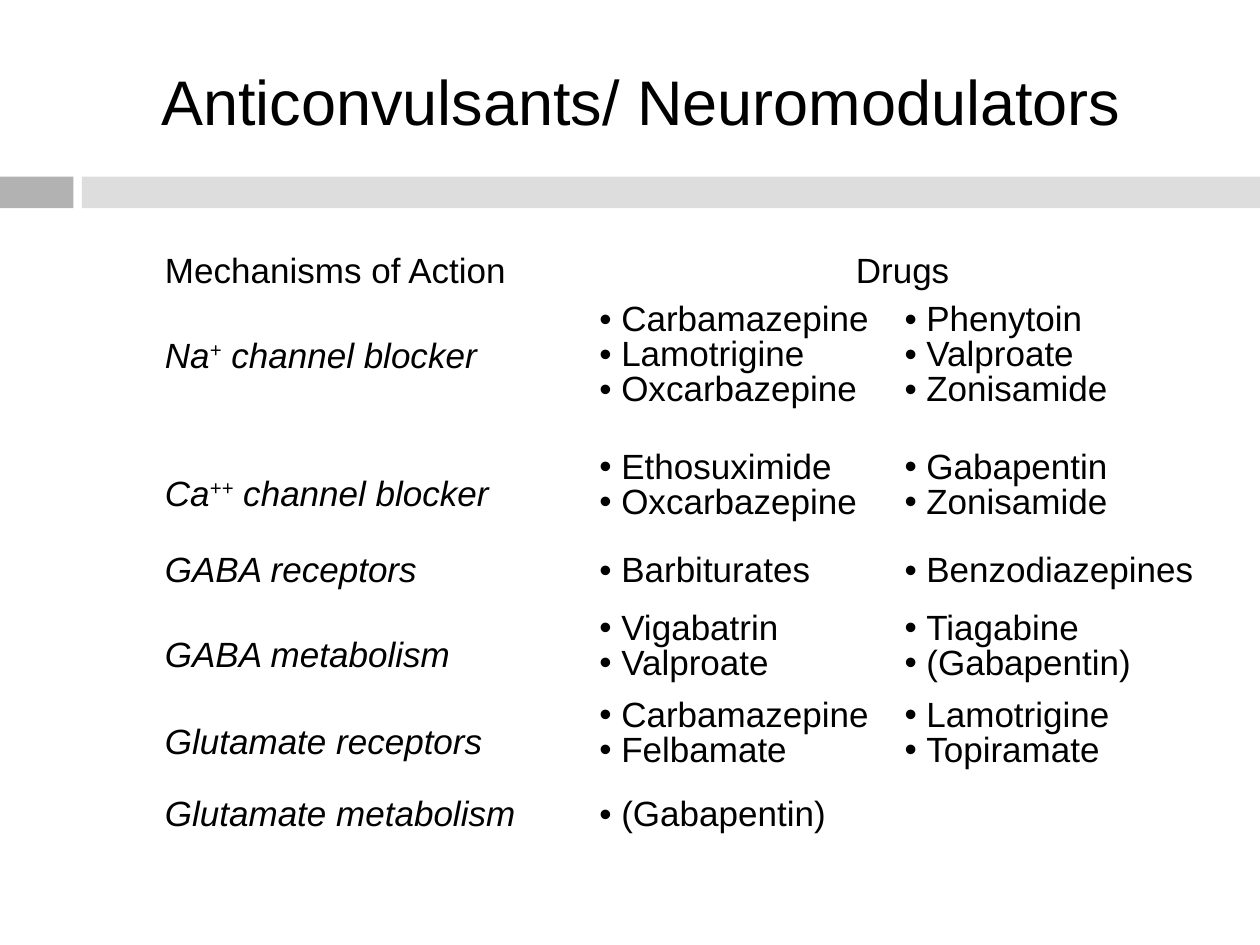
from lxml.etree import SubElement
from pptx import Presentation
from pptx.dml.color import RGBColor
from pptx.enum.shapes import MSO_SHAPE
from pptx.enum.text import MSO_ANCHOR, PP_ALIGN
from pptx.oxml.ns import qn
from pptx.util import Cm, Pt

# Content: mechanism as (text, superscript, text), then two drug lists
TITLE = "Anticonvulsants/ Neuromodulators"
HEADS = ["Mechanisms of Action", "Drugs"]
ROWS = [
    (("Na", "+", " channel blocker"),
     ["Carbamazepine", "Lamotrigine", "Oxcarbazepine"],
     ["Phenytoin", "Valproate", "Zonisamide"]),
    (("Ca", "++", " channel blocker"),
     ["Ethosuximide", "Oxcarbazepine"], ["Gabapentin", "Zonisamide"]),
    (("GABA receptors",), ["Barbiturates"], ["Benzodiazepines"]),
    (("GABA metabolism",),
     ["Vigabatrin", "Valproate"], ["Tiagabine", "(Gabapentin)"]),
    (("Glutamate receptors",),
     ["Carbamazepine", "Felbamate"], ["Lamotrigine", "Topiramate"]),
    (("Glutamate metabolism",), ["(Gabapentin)"], []),
]
LEADS = [0.9, 1.6, 1.0, 1.6, 1.6, 0.9]  # line spacing of the mechanisms
WIDTHS = [8.76, 6.15, 6.58]
HEIGHTS = [0.91, 2.97, 2.01, 1.24, 1.75, 2.01, 1.19]
BARS = [(0, 1.48, "dark"), (1.65, 23.75, "light")]
COLORS = {"text": "000000", "dark": "B2B2B2", "light": "DDDDDD"}
FONT = "Arial"


def color(name):
    return RGBColor.from_string(COLORS[name])


def style(font, size):
    font.name, font.size = FONT, Pt(size)
    font.color.rgb = color("text")


def write(cell, lines, lead=0.9, dots=False):
    """Fill a cell with one paragraph a line, bulleted on request."""
    frame = cell.text_frame
    frame.text = "\n".join(lines)
    for para in frame.paragraphs:
        para.line_spacing = lead
        if dots:
            props = para._p.get_or_add_pPr()
            props.set("marL", str(Cm(0.44)))
            props.set("indent", str(-Cm(0.44)))
            SubElement(props, qn("a:buFont"), typeface=FONT)
            SubElement(props, qn("a:buChar"), char="•")
        style(para.font, 20)
        for run in para.runs:
            style(run.font, 20)


def label(cell, parts, lead):
    """Write a mechanism in italics, its second part raised."""
    para = cell.text_frame.paragraphs[0]
    para.line_spacing = lead
    for i, part in enumerate(parts):
        run = para.add_run()
        run.text = part
        style(run.font, 20)
        run.font.italic = True
        if i == 1:
            run.font._element.set("baseline", "30000")


deck = Presentation()
deck.slide_width, deck.slide_height = Cm(25.4), Cm(19.05)
slide = deck.slides.add_slide(deck.slide_layouts[6])

# Bars under the title
for left, width, tone in BARS:
    bar = slide.shapes.add_shape(
        MSO_SHAPE.RECTANGLE, Cm(left), Cm(3.56), Cm(width), Cm(0.64))
    bar.shadow.inherit = False
    bar.fill.solid()
    bar.fill.fore_color.rgb = color(tone)
    bar.line.fill.background()

# Table
table = slide.shapes.add_table(
    len(HEIGHTS), len(WIDTHS), Cm(3.07), Cm(5.03),
    Cm(sum(WIDTHS)), Cm(sum(HEIGHTS))).table
table.first_row = table.horz_banding = False
for col, width in zip(table.columns, WIDTHS):
    col.width = Cm(width)
for row, height in zip(table.rows, HEIGHTS):
    row.height = Cm(height)
for cell in table.iter_cells():
    cell.fill.background()

# Header row
table.cell(0, 1).merge(table.cell(0, 2))
for i, head in enumerate(HEADS):
    write(table.cell(0, i), [head])
table.cell(0, 1).text_frame.paragraphs[0].alignment = PP_ALIGN.CENTER

# Mechanisms and their drugs
for r, ((parts, *lists), lead) in enumerate(zip(ROWS, LEADS), 1):
    label(table.cell(r, 0), parts, lead)
    for c, drugs in enumerate(lists, 1):
        if drugs:
            write(table.cell(r, c), drugs, 1.0 if lead == 1 else 0.9, True)
table.cell(1, 0).margin_top = Cm(0.86)  # level with the second drug

# Title
box = slide.shapes.add_textbox(Cm(3), Cm(0.43), Cm(21.89), Cm(3.18))
frame = box.text_frame
frame.word_wrap = True
frame.vertical_anchor = MSO_ANCHOR.MIDDLE
frame.text = TITLE
style(frame.paragraphs[0].runs[0].font, 36)

deck.save("out.pptx")
